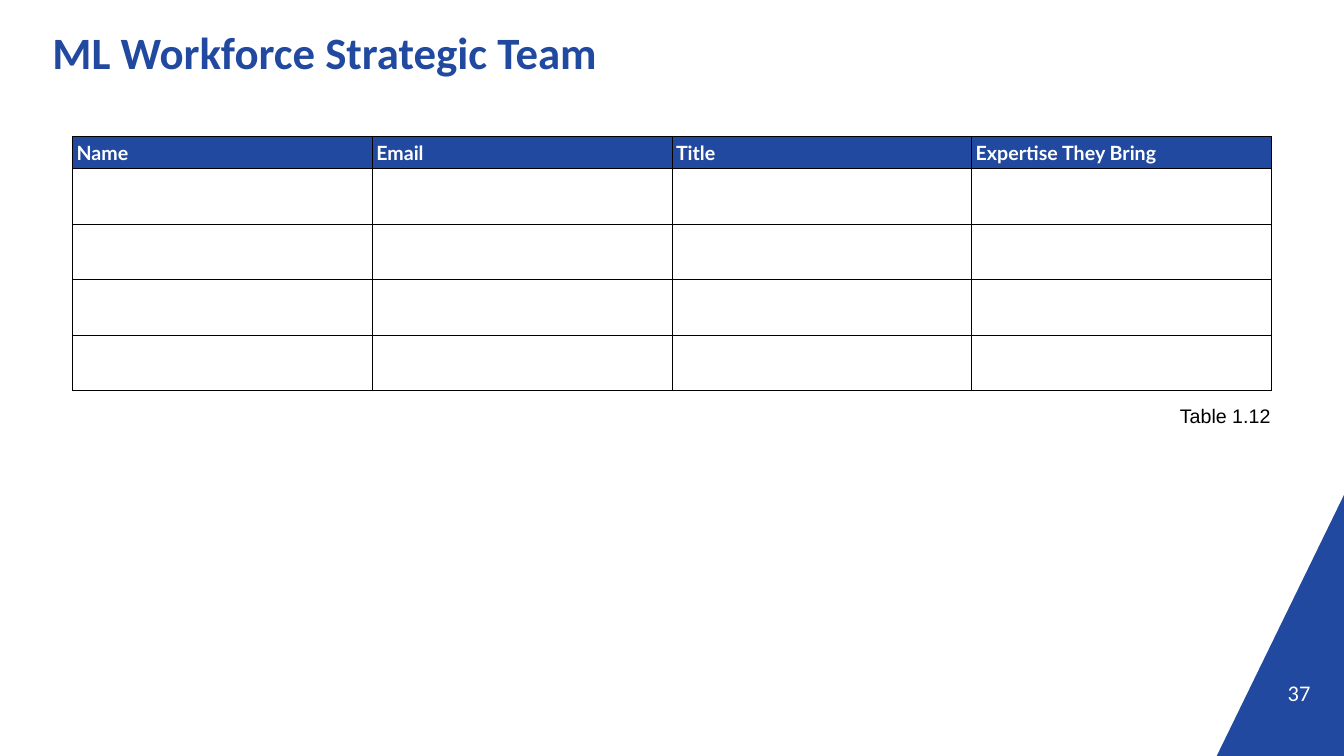
from lxml import etree
from pptx import Presentation
from pptx.dml.color import RGBColor
from pptx.enum.text import MSO_ANCHOR, PP_ALIGN
from pptx.oxml.ns import qn
from pptx.util import Inches, Pt

BLUE = RGBColor(0x20, 0x49, 0x9F)
WHITE = RGBColor(0xFF, 0xFF, 0xFF)
BLACK = RGBColor(0x00, 0x00, 0x00)
LEFT, RIGHT = PP_ALIGN.LEFT, PP_ALIGN.RIGHT
TOP, MIDDLE, BOTTOM = MSO_ANCHOR.TOP, MSO_ANCHOR.MIDDLE, MSO_ANCHOR.BOTTOM
TITLE_ONLY = 5
GRID = 100  # columns and rows across the slide
HEADERS = ["Name", "Email", "Title", "Expertise They Bring"]
EMPTY_ROWS = 4


class Deck:
    def __init__(self):
        self.prs = Presentation()
        self.prs.slide_width = Inches(13.333)
        self.prs.slide_height = Inches(7.5)
        self.s = self.prs.slides.add_slide(self.prs.slide_layouts[TITLE_ONLY])

    def x(self, columns):
        return round(self.prs.slide_width * columns / GRID)

    def y(self, rows):
        return round(self.prs.slide_height * rows / GRID)

    def box(self, left, top, width, height):
        return self.x(left), self.y(top), self.x(width), self.y(height)

    def style(self, p, font, size, color, bold=False):
        for r in p.runs:
            r.font.name, r.font.size, r.font.bold = font, Pt(size), bold
            r.font.color.rgb = color

    def set_text(self, sp, text, font, size, color, bold=False,
                 align=LEFT, anchor=TOP, inset=None):
        tf = sp.text_frame
        tf.text = text
        tf.word_wrap = True
        tf.vertical_anchor = anchor
        if inset is not None:
            tf.margin_left = tf.margin_right = Inches(inset)
            tf.margin_top = tf.margin_bottom = Inches(inset)
        p = tf.paragraphs[0]
        p.alignment = align
        self.style(p, font, size, color, bold)

    def title(self, text, *area):
        sp = self.s.shapes.title
        sp.left, sp.top, sp.width, sp.height = self.box(*area)
        self.set_text(sp, text, "Calibri", 32, BLUE, True, anchor=MIDDLE, inset=0)

    def text(self, text, *area, **look):
        self.set_text(self.s.shapes.add_textbox(*self.box(*area)), text, **look)

    def corner(self, left, top):
        """Fill the triangle that closes the bottom right corner."""
        builder = self.s.shapes.build_freeform(self.x(GRID), self.y(top))
        builder.add_line_segments([(self.x(left), self.y(GRID)),
                                   (self.x(GRID), self.y(GRID))])
        sp = builder.convert_to_shape()
        sp.shadow.inherit = False
        sp.fill.solid()
        sp.fill.fore_color.rgb = BLUE
        sp.line.fill.background()

    def border(self, cell):
        tcPr = cell._tc.get_or_add_tcPr()
        for i, side in enumerate(("a:lnL", "a:lnR", "a:lnT", "a:lnB")):
            ln = etree.Element(qn(side), w=str(Pt(0.75)))
            fill = etree.SubElement(ln, qn("a:solidFill"))
            etree.SubElement(fill, qn("a:srgbClr"), val=str(BLACK))
            tcPr.insert(i, ln)

    def table(self, left, top, column, head, row):
        """Draw the header row and the empty rows, sized in grid units."""
        size = self.box(left, top, column * len(HEADERS), head + row * EMPTY_ROWS)
        table = self.s.shapes.add_table(EMPTY_ROWS + 1, len(HEADERS), *size).table
        table.first_row = table.horz_banding = False
        for c in table.columns:
            c.width = self.x(column)
        for i, r in enumerate(table.rows):
            r.height = self.y(row if i else head)
            for cell in r.cells:
                cell.fill.background()
                self.border(cell)
        for cell, text in zip(table.rows[0].cells, HEADERS):
            cell.fill.solid()
            cell.fill.fore_color.rgb = BLUE
            cell.vertical_anchor = MIDDLE
            cell.margin_left = cell.margin_right = Inches(0.04)
            cell.margin_top = cell.margin_bottom = Inches(0.04)
            cell.text = text
            p = cell.text_frame.paragraphs[0]
            p.space_after = Pt(10.1)
            self.style(p, "Lato", 14, WHITE, True)


def main():
    deck = Deck()
    deck.corner(90.53, 65.47)
    deck.title("ML Workforce Strategic Team", 3.9, 3.2, 72.4, 7.2)
    deck.text("37", 90.1, 89.33, 7.4, 4, font="Calibri", size=16, color=WHITE,
              align=RIGHT, anchor=BOTTOM, inset=0)
    deck.table(5.4, 18.1, column=22.3, head=4.2, row=7.35)
    deck.text("Table 1.12", 87.05, 52.8, 10.45, 4.5,
              font="Arial", size=14, color=BLACK)
    deck.prs.save("out.pptx")


if __name__ == "__main__":
    main()
